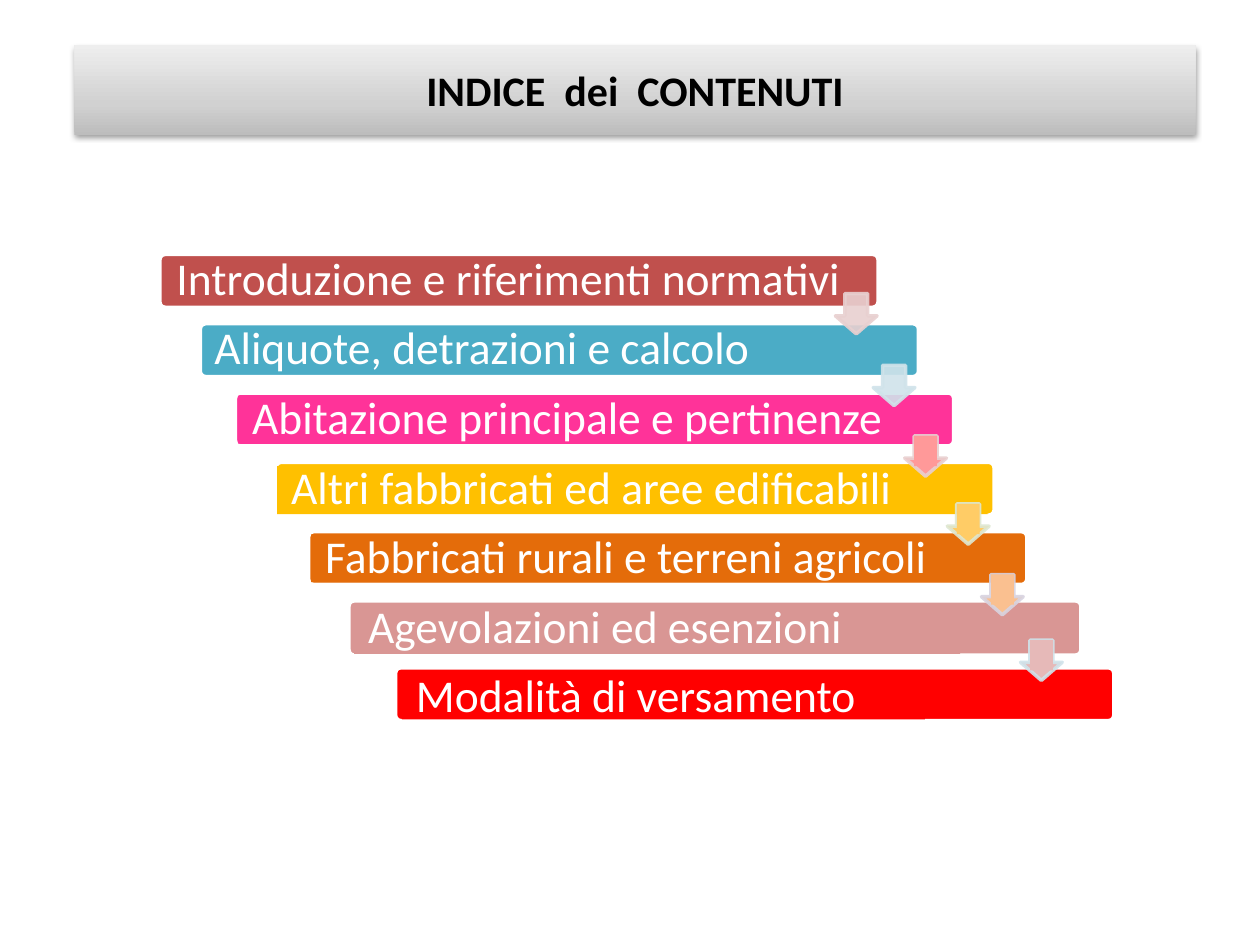
"""Build an index slide with a staircase of topic bars joined by arrows."""
from lxml.etree import SubElement
from pptx import Presentation
from pptx.dml.color import RGBColor
from pptx.enum.shapes import MSO_SHAPE
from pptx.enum.text import MSO_ANCHOR, PP_ALIGN
from pptx.oxml import parse_xml
from pptx.oxml.ns import nsdecls, qn
from pptx.util import Pt

WHITE = RGBColor(0xFF, 0xFF, 0xFF)
BLACK = RGBColor(0x00, 0x00, 0x00)
BRICK = RGBColor(0xC0, 0x50, 0x4D)
TEAL = RGBColor(0x4B, 0xAC, 0xC6)
PINK = RGBColor(0xFF, 0x33, 0x99)
GOLD = RGBColor(0xFF, 0xC0, 0x00)
ORANGE = RGBColor(0xE4, 0x6C, 0x0A)
ROSE = RGBColor(0xD9, 0x96, 0x94)
RED = RGBColor(0xFF, 0x00, 0x00)
BLUSH = RGBColor(0xE8, 0xD0, 0xD0)
ICE = RGBColor(0xD0, 0xE3, 0xEA)
CORAL = RGBColor(0xFF, 0x99, 0x99)
AMBER = RGBColor(0xFF, 0xCC, 0x66)
PEACH = RGBColor(0xFA, 0xC0, 0x90)
DUSK = RGBColor(0xE6, 0xB9, 0xB8)
MINT = RGBColor(0xDE, 0xE7, 0xD1)
LILAC = RGBColor(0xD8, 0xD3, 0xE0)

BAND = (
    f'<a:prstGeom {nsdecls("a")} prst="snip2DiagRect"><a:avLst/></a:prstGeom>',
    f'<a:gradFill {nsdecls("a")} rotWithShape="1"><a:gsLst>'
    '<a:gs pos="0"><a:srgbClr val="BDBDBD"/></a:gs>'
    '<a:gs pos="35000"><a:srgbClr val="D1D1D1"/></a:gs>'
    '<a:gs pos="100000"><a:srgbClr val="EEEEEE"/></a:gs>'
    '</a:gsLst><a:lin ang="16200000" scaled="1"/></a:gradFill>',
    f'<a:effectLst {nsdecls("a")}>'
    '<a:outerShdw blurRad="40000" dist="20000" dir="5400000" rotWithShape="0">'
    '<a:srgbClr val="000000"><a:alpha val="38000"/></a:srgbClr>'
    '</a:outerShdw></a:effectLst>',
)

STEP = 39.6
TOPICS = [
    ("Introduzione e riferimenti normativi", BRICK, (91.4, 145.4, 410.4, 30.2), (92.9, 146.2, 408.2, 28.1)),
    ("Aliquote, detrazioni e calcolo", TEAL, (114.5, 145.4 + STEP, 410.4, 30.2), (114.5, 185.8, 352, 28.1)),
    ("Abitazione principale e pertinenze", PINK, (134.6, 145.4 + 2 * STEP, 410.4, 30.2), (136.1, 226.1, 398.9, 27.4)),
    ("Altri fabbricati ed aree edificabili", GOLD, (157.7, 145.4 + 3 * STEP, 410.4, 30.2), (158.4, 266.4, 406, 27.4)),
    ("Fabbricati rurali e terreni agricoli", ORANGE, (176.4, 145.4 + 4 * STEP, 410.4, 30.2), (177.8, 305.3, 401.8, 27.4)),
    ("Agevolazioni ed esenzioni", ROSE, (199.4, 145.4 + 5 * STEP, 418.3, 31), (202.3, 344.9, 346.3, 28.8)),
    ("Modalità di versamento", RED, (226.1, 381.6, 410.4, 30.2), (229.7, 386.6, 298.8, 24.5)),
]
ARROWS = [
    (477.4, 167.8, BLUSH, BLUSH),
    (499, 208.8, ICE, ICE),
    (517, 249.1, CORAL, BLUSH),
    (541.4, 288, AMBER, MINT),
    (560.9, 328.3, PEACH, LILAC),
    (583.2, 365.8, DUSK, ICE),
]


class Deck:
    """Hold the style and the current slide."""

    font = "Calibri"

    def __init__(self):
        self.file = Presentation()
        self.file.slide_width, self.file.slide_height = Pt(720), Pt(540)
        self.slide = self.file.slides.add_slide(self.file.slide_layouts[5])

    def label(self, shape, text, size, color, align, bold=False):
        """Put one styled line of text in a shape."""
        frame = shape.text_frame
        frame.text = text
        frame.word_wrap = True
        frame.vertical_anchor = MSO_ANCHOR.MIDDLE
        line = frame.paragraphs[0]
        line.alignment = align
        line.font.name, line.font.size, line.font.bold = self.font, Pt(size), bold
        line.font.color.rgb = color
        return frame

    def title(self, text, box):
        """Turn the title placeholder into a shaded band."""
        shape = self.slide.shapes.title
        shape.left, shape.top, shape.width, shape.height = map(Pt, box)
        for part in BAND:
            shape.element.spPr.append(parse_xml(part))
        self.label(shape, text, 24, BLACK, PP_ALIGN.CENTER, True)

    def block(self, kind, box, fill, edge=None, ratios=()):
        """Add a flat preset shape."""
        shape = self.slide.shapes.add_shape(kind, *map(Pt, box))
        shape.shadow.inherit = False
        shape.fill.solid()
        shape.fill.fore_color.rgb = fill
        if edge is None:
            shape.line.fill.background()
        else:
            shape.line.color.rgb = edge
            shape.line.width = Pt(2)
        for i, ratio in enumerate(ratios):
            shape.adjustments[i] = ratio
        return shape

    def topic(self, text, color, bar, inner):
        """Add a rounded bar with its label panel."""
        self.block(MSO_SHAPE.ROUNDED_RECTANGLE, bar, color, WHITE, [0.1])
        panel = self.block(MSO_SHAPE.RECTANGLE, inner, color)
        if color in (BRICK, TEAL):
            panel.fill.background()
        frame = self.label(panel, text, 26, WHITE, PP_ALIGN.LEFT)
        frame.margin_left = frame.margin_right = Pt(8)
        frame.margin_top = frame.margin_bottom = Pt(8)
        frame.paragraphs[0].line_spacing = 0.9

    def arrow(self, left, top, fill, edge):
        """Add a down arrow with a translucent edge."""
        box = (left, top, 23.8, 23)
        shape = self.block(MSO_SHAPE.DOWN_ARROW, box, fill, edge, [0.55, 0.45])
        for color in shape.element.spPr.iter(qn("a:srgbClr")):
            if color.get("val") == str(edge):
                SubElement(color, qn("a:alpha")).set("val", "90000")
        if fill != edge:
            self.block(MSO_SHAPE.RECTANGLE, (left + 5.4, top, 13, 17.3), fill)


def main():
    """Build and save the slide."""
    deck = Deck()
    deck.title("INDICE  dei  CONTENUTI", (42.5, 25.9, 640.8, 51.1))
    for topic in TOPICS:
        deck.topic(*topic)
    for arrow in ARROWS:
        deck.arrow(*arrow)
    deck.file.save("out.pptx")


if __name__ == "__main__":
    main()
